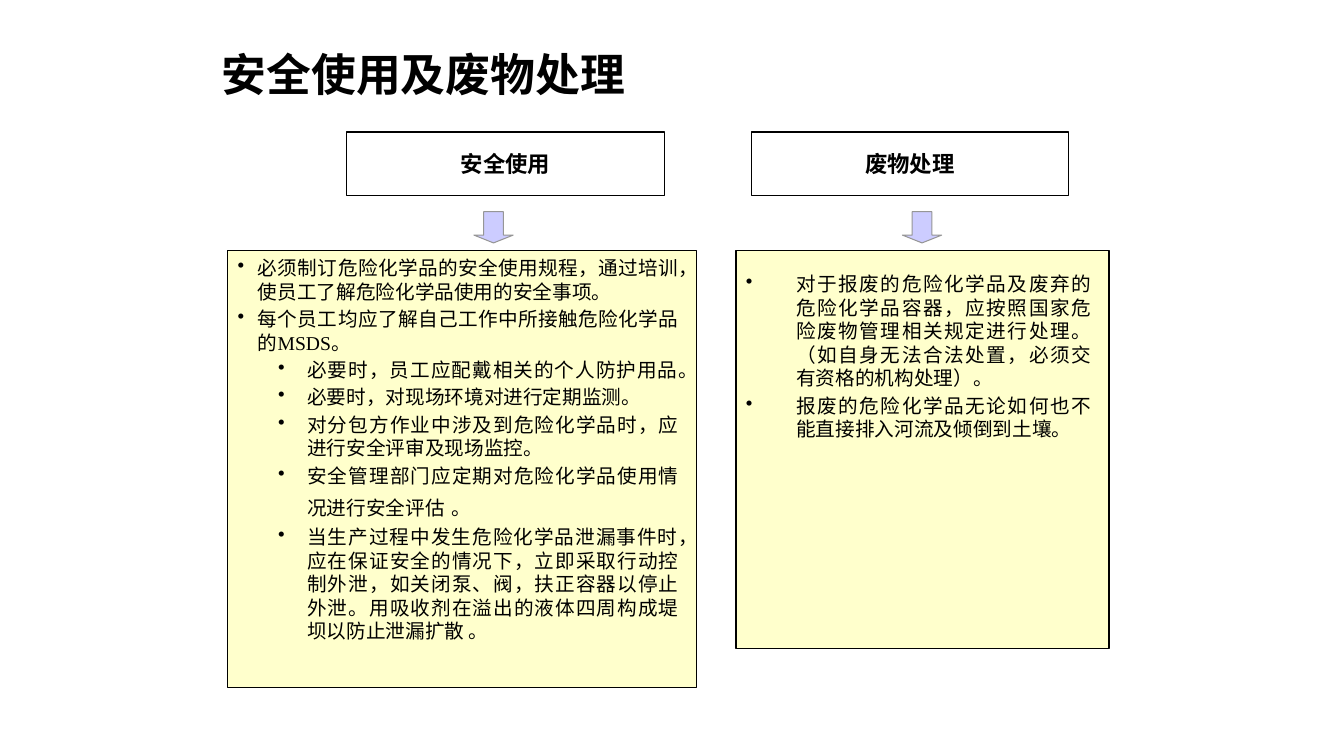
from dataclasses import dataclass

from lxml import etree
from pptx import Presentation
from pptx import util as u
from pptx.dml.color import RGBColor
from pptx.enum import shapes, text
from pptx.oxml.ns import qn


@dataclass(frozen=True)
class Theme:
    """Colours, font and type sizes of the slide."""
    font: str = "Times New Roman"
    ink: str = "000000"
    panel: str = "FFFFCC"
    arrow: str = "CCCCFF"
    arrow_line: str = "969696"
    title: int = 32
    heading: int = 16
    body: int = 14
    wide_gap: int = 20


@dataclass(frozen=True)
class Box:
    """A rectangle in inches."""
    left: float
    top: float
    width: float
    height: float

    def emu(self):
        """Return the rectangle as lengths for python-pptx."""
        return [u.Inches(side) for side in (self.left, self.top, self.width, self.height)]


THEME = Theme()
SLIDE_WIDTH, SLIDE_HEIGHT = 13.33, 7.5
HEADING_TOP, ARROW_TOP, PANEL_TOP = 1.31, 2.1, 2.49
HEADING_SIZE = (3.15, 0.63)
ARROW_SIZE = (0.39, 0.31)
TEXT_INSET = 0.08
SUB_LEVEL = (1, 0.69, 0.29)

SAFE_USE_LEVEL = (0, 0.2, 0.2)
SAFE_USE = [
    (SAFE_USE_LEVEL, ["必须制订危险化学品的安全使用规程，通过培训，使员工了解危险化学品使用的安全事项。"]),
    (SAFE_USE_LEVEL, ["每个员工均应了解自己工作中所接触危险化学品的MSDS。"]),
    (SUB_LEVEL, ["必要时，员工应配戴相关的个人防护用品。"]),
    (SUB_LEVEL, ["必要时，对现场环境对进行定期监测。"]),
    (SUB_LEVEL, ["对分包方作业中涉及到危险化学品时，应进行安全评审及现场监控。"]),
    (SUB_LEVEL, ["安全管理部门应定期对危险化学品使用情况进行安全评估", " ", "。"]),
    (SUB_LEVEL, ["当生产过程中发生危险化学品泄漏事件时，应在保证安全的情况下，立即采取行动控制外泄，"
                 "如关闭泵、阀，扶正容器以停止外泄。用吸收剂在溢出的液体四周构成堤坝以防止泄漏扩散 。"]),
]

WASTE_LEVEL = (0, 0.5, 0.5)
WASTE = [
    (WASTE_LEVEL, ["对于报废的危险化学品及废弃的危险化学品容器，应按照国家危险废物管理相关规定进行处理。"
                   "（如自身无法合法处置，必须交有资格的机构处理）。"]),
    (WASTE_LEVEL, ["报废的危险化学品无论如何也不能直接排入河流及倾倒到土壤。"]),
]


def add_run(paragraph, words, size, bold=False):
    """Add one run in the theme font."""
    run = paragraph.add_run()
    run.text = words
    run.font.name = THEME.font
    run.font.size = u.Pt(size)
    run.font.bold = bold
    run.font.color.rgb = RGBColor.from_string(THEME.ink)


def add_outlined(slide, kind, box, fill=None, line=THEME.ink):
    """Add a thin-lined preset shape, filled or hollow."""
    shape = slide.shapes.add_shape(kind, *box.emu())
    shape.shadow.inherit = False
    if fill:
        shape.fill.solid()
        shape.fill.fore_color.rgb = RGBColor.from_string(fill)
    else:
        shape.fill.background()
    shape.line.color.rgb = RGBColor.from_string(line)
    shape.line.width = u.Pt(0.75)
    return shape


def add_title(slide, box, words):
    """Add the slide title."""
    frame = slide.shapes.add_textbox(*box.emu()).text_frame
    frame.word_wrap = True
    frame.vertical_anchor = text.MSO_ANCHOR.MIDDLE
    add_run(frame.paragraphs[0], words, THEME.title, bold=True)


def add_heading(slide, box, words):
    """Add a hollow box with a centred heading."""
    frame = add_outlined(slide, shapes.MSO_SHAPE.RECTANGLE, box).text_frame
    frame.word_wrap = False
    frame.vertical_anchor = text.MSO_ANCHOR.MIDDLE
    paragraph = frame.paragraphs[0]
    paragraph.alignment = text.PP_ALIGN.CENTER
    add_run(paragraph, words, THEME.heading, bold=True)


def add_bullets(slide, box, items):
    """Add a justified bullet list."""
    frame = slide.shapes.add_textbox(*box.emu()).text_frame
    frame.word_wrap = True
    for index, ((level, indent, hanging), pieces) in enumerate(items):
        paragraph = frame.add_paragraph() if index else frame.paragraphs[0]
        properties = paragraph._p.get_or_add_pPr()
        properties.set("marL", str(u.Inches(indent)))
        properties.set("indent", str(-u.Inches(hanging)))
        etree.SubElement(properties, qn("a:buChar")).set("char", "•")
        paragraph.level = level
        paragraph.alignment = text.PP_ALIGN.JUSTIFY
        if index:
            paragraph.space_before = u.Pt(THEME.body * 0.2)
        for piece in pieces:
            gap = piece == " "
            add_run(paragraph, piece, THEME.wide_gap if gap else THEME.body, bold=gap)


def add_topic(slide, panel, heading, heading_left, arrow_left, items, text_drop=0):
    """Add a heading, an arrow and the panel of bullets below them."""
    add_heading(slide, Box(heading_left, HEADING_TOP, *HEADING_SIZE), heading)
    add_outlined(slide, shapes.MSO_SHAPE.RECTANGLE, panel, THEME.panel)
    add_bullets(slide, Box(panel.left, panel.top + text_drop, panel.width - TEXT_INSET,
                           panel.height - text_drop), items)
    arrow = Box(arrow_left, ARROW_TOP, *ARROW_SIZE)
    shape = add_outlined(slide, shapes.MSO_SHAPE.DOWN_ARROW, arrow, THEME.arrow, THEME.arrow_line)
    shape.adjustments[0] = 0.5
    shape.adjustments[1] = 0.25


def main():
    """Build and save the slide."""
    presentation = Presentation()
    presentation.slide_width = u.Inches(SLIDE_WIDTH)
    presentation.slide_height = u.Inches(SLIDE_HEIGHT)
    slide = presentation.slides.add_slide(presentation.slide_layouts[6])
    add_title(slide, Box(2.1, 0.36, 8.48, 0.75), "安全使用及废物处理")
    add_topic(slide, Box(2.26, PANEL_TOP, 4.65, 4.33), "安全使用", 3.44, 4.7, SAFE_USE)
    add_topic(slide, Box(7.3, PANEL_TOP, 3.7, 3.94), "废物处理", 7.45, 8.95, WASTE, text_drop=0.16)
    presentation.save("out.pptx")


if __name__ == "__main__":
    main()
